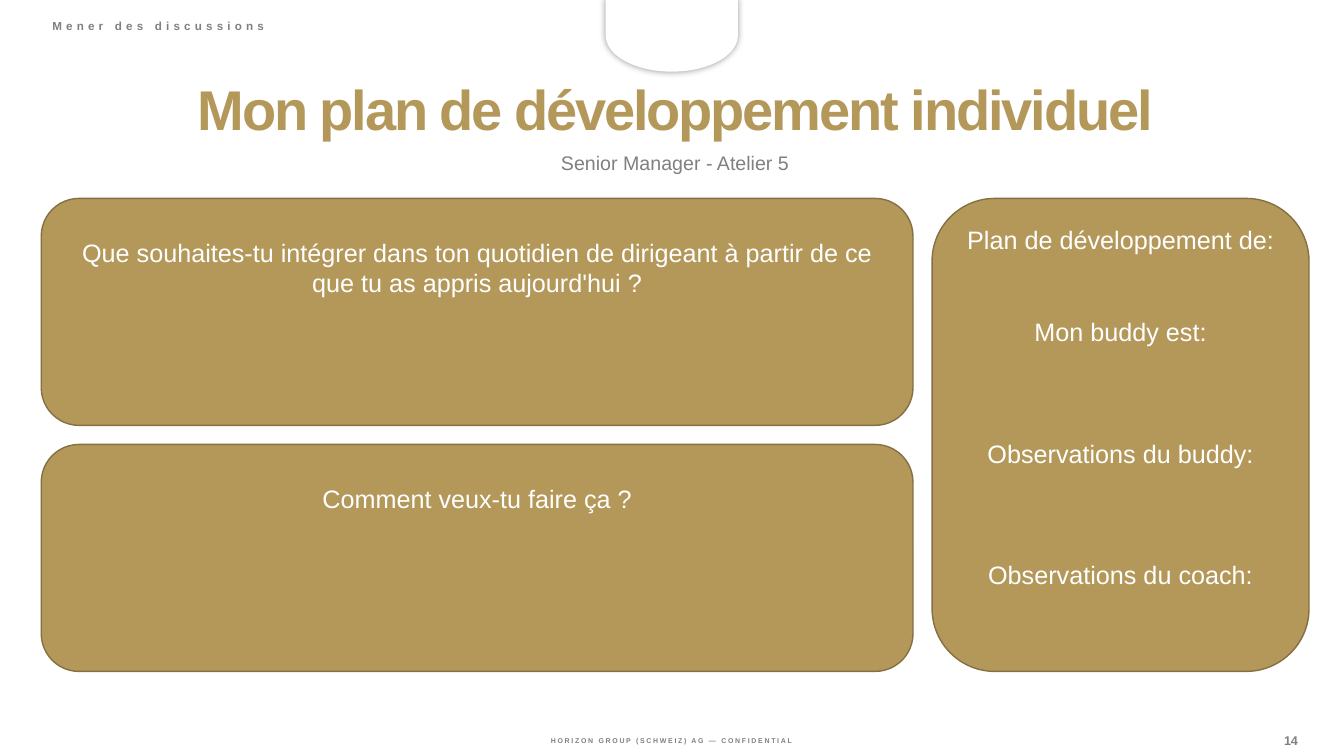
import pptx
import pptx.util
import pptx.dml.color
import pptx.enum.shapes
import pptx.enum.text
import pptx.oxml
import pptx.oxml.ns

Cm = pptx.util.Cm
Pt = pptx.util.Pt
KIND = pptx.enum.shapes.MSO_SHAPE
ALIGN = pptx.enum.text.PP_ALIGN
ANCHOR = pptx.enum.text.MSO_ANCHOR
GOLD, EDGE, GREY, WHITE = "B3985A", "847043", "808080", "FFFFFF"
LEFT, TOP, GAP = 1.04, 5, 0.48
WIDE, HIGH, SIDE = 21.97, 5.72, 9.5


def paint(color, code):
    """Give a fill or font colour a hex value."""
    color.rgb = pptx.dml.color.RGBColor.from_string(code)


def write(para, text, size, code, bold=False, track=0):
    """Add one styled run to a paragraph."""
    run = para.add_run()
    run.text = text
    run.font.name = "Arial"
    run.font.size = Pt(size)
    run.font.bold = bold
    paint(run.font.color, code)
    if track:
        run._r.get_or_add_rPr().set("spc", str(round(track * 100)))


def label(slide, box, text, size, code, bold=False, track=0,
          align=ALIGN.CENTER, pitch=1.0, anchor=ANCHOR.TOP, tight=False):
    """Add a text box with a single line."""
    frame = slide.shapes.add_textbox(*map(Cm, box)).text_frame
    frame.word_wrap = True
    frame.vertical_anchor = anchor
    if tight:
        frame.margin_left = frame.margin_right = frame.margin_bottom = 0
        frame.margin_top = Cm(0.06)
    para = frame.paragraphs[0]
    para.alignment = align
    para.line_spacing = pitch
    write(para, text, size, code, bold, track)


def shape(slide, kind, box, fill, line):
    """Add a filled shape with a thin outline."""
    item = slide.shapes.add_shape(kind, *map(Cm, box))
    item.shadow.inherit = False
    item.fill.solid()
    paint(item.fill.fore_color, fill)
    paint(item.line.color, line)
    item.line.width = Pt(1)
    return item


def panel(slide, box, inset, lines):
    """Add a gold panel from pairs of space before and text."""
    frame = shape(slide, KIND.ROUNDED_RECTANGLE, box, GOLD, EDGE).text_frame
    frame.word_wrap = True
    frame.vertical_anchor = ANCHOR.TOP
    frame.margin_top = Cm(inset)
    for rank, (space, text) in enumerate(lines):
        para = frame.add_paragraph() if rank else frame.paragraphs[0]
        para.alignment = ALIGN.CENTER
        if rank:
            para.space_before = Pt(space)
        write(para, text, 18, WHITE)


def tab(slide):
    """Add the white tab with a soft shadow at the top edge."""
    item = shape(slide, KIND.FLOWCHART_DELAY, (16.03, -0.76, 1.8, 3.3), WHITE, WHITE)
    item.rotation = 90
    glow = item._element.spPr.find(pptx.oxml.ns.qn("a:effectLst"))
    glow.append(pptx.oxml.parse_xml(
        f'<a:outerShdw {pptx.oxml.ns.nsdecls("a")} blurRad="{Pt(5)}" dist="0" dir="0"'
        ' algn="ctr" rotWithShape="0"><a:srgbClr val="000000">'
        '<a:alpha val="40000"/></a:srgbClr></a:outerShdw>'))


def main():
    """Build and save the slide."""
    deck = pptx.Presentation()
    deck.slide_width, deck.slide_height = Cm(33.87), Cm(19.05)
    slide = deck.slides.add_slide(deck.slide_layouts[6])
    tab(slide)
    label(slide, (10.49, 18.5, 12.88, 0.25), "HORIZON GROUP (SCHWEIZ) AG — CONFIDENTIAL",
          5, GREY, True, 1.2, tight=True)
    label(slide, (31.57, 18.4, 1.93, 0.41), "14", 9, GREY, True, -0.1, tight=True)
    label(slide, (LEFT, 3.78, 31.95, 0.79), "Senior Manager - Atelier 5", 14, GREY, pitch=0.8)
    label(slide, (LEFT, 1.93, 31.95, 1.8), "Mon plan de développement individuel",
          40, GOLD, True, -1.5, pitch=0.9, anchor=ANCHOR.MIDDLE)
    label(slide, (1.07, 0.41, 12.37, 0.53), "Mener des discussions",
          8.3, GREY, True, 3, ALIGN.LEFT, 0.8)
    asks = ("Que souhaites-tu intégrer dans ton quotidien de dirigeant "
            "à partir de ce que tu as appris aujourd'hui ?",
            "Comment veux-tu faire ça ?")
    for row, ask in enumerate(asks):
        panel(slide, (LEFT, TOP + row * (HIGH + GAP), WIDE, HIGH), 0.7, [(0, ask)])
    panel(slide, (LEFT + WIDE + GAP, TOP, SIDE, 2 * HIGH + GAP), 0.2,
          [(0, "Plan de développement de:"), (43.5, "Mon buddy est:"),
           (65.5, "Observations du buddy:"), (65.5, "Observations du coach:")])
    deck.save("out.pptx")


if __name__ == "__main__":
    main()
